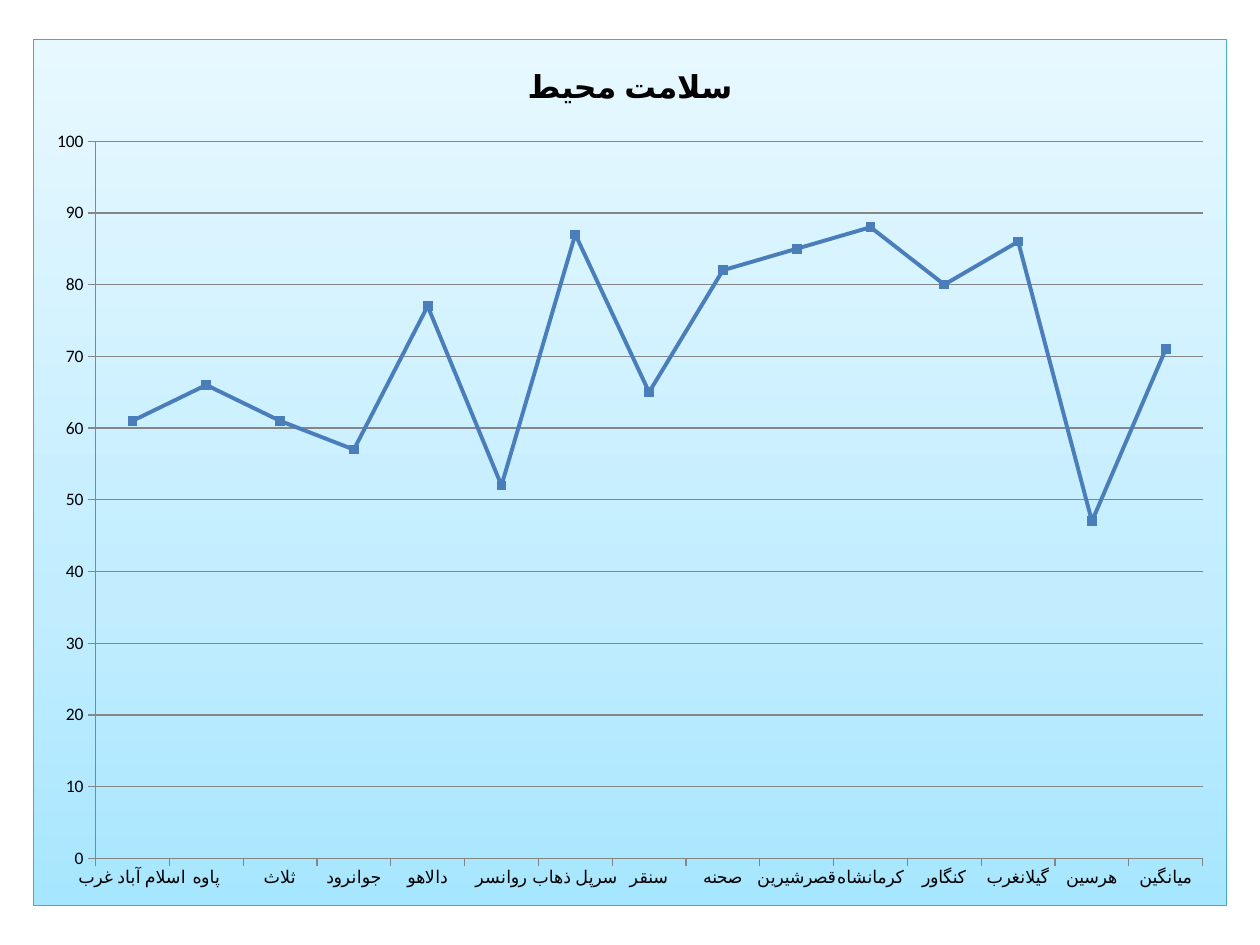
"""Build a slide with a line chart of environmental health by county."""
from pptx import Presentation
from pptx.chart.data import CategoryChartData
from pptx.dml.color import RGBColor
from pptx.enum.chart import XL_CHART_TYPE, XL_MARKER_STYLE, XL_TICK_MARK
from pptx.oxml import parse_xml
from pptx.oxml.ns import nsdecls
from pptx.util import Inches, Pt


def paint(color, code):
    color.rgb = RGBColor.from_string(code)


title = "سلامت محیط"
rates = {
    "اسلام آباد غرب": 61,
    "پاوه": 66,
    "ثلاث": 61,
    "جوانرود": 57,
    "دالاهو": 77,
    "روانسر": 52,
    "سرپل ذهاب": 87,
    "سنقر": 65,
    "صحنه": 82,
    "قصرشیرین": 85,
    "کرمانشاه": 88,
    "کنگاور": 80,
    "گیلانغرب": 86,
    "هرسین": 47,
    "میانگین": 71,
}

deck = Presentation()
deck.slide_width, deck.slide_height = Inches(10), Inches(7.5)
slide = deck.slides.add_slide(deck.slide_layouts[6])

data = CategoryChartData()
data.categories = list(rates)
data.add_series(title, list(rates.values()))
chart = slide.shapes.add_chart(
    XL_CHART_TYPE.LINE_MARKERS,
    Inches(0.26), Inches(0.31), Inches(9.48), Inches(6.88), data,
).chart
chart.has_legend = False
chart.font.name = "Calibri"
chart.font.size = Pt(10)
paint(chart.font.color, "000000")

chart.has_title = True
run = chart.chart_title.text_frame.paragraphs[0].add_run()
run.text = title
run.font.size = Pt(18)
run.font.bold = True
paint(run.font.color, "000000")
chart.chart_title.include_in_layout = False

names, rows = chart.category_axis, chart.value_axis
rows.minimum_scale, rows.maximum_scale, rows.major_unit = 0, 100, 10
rows.has_major_gridlines = True
rows.tick_labels.number_format = "0"
rows.tick_labels.number_format_is_linked = False
for axis in (names, rows):
    axis.major_tick_mark = XL_TICK_MARK.OUTSIDE
    axis.minor_tick_mark = XL_TICK_MARK.NONE
for part in (names, rows, rows.major_gridlines):
    paint(part.format.line.color, "868686")
    part.format.line.width = Pt(0.75)

plot = chart.plots[0]
plot.vary_by_categories = False
series = plot.series[0]
series.smooth = False
paint(series.format.line.color, "4A7EBB")
series.format.line.width = Pt(2.25)
mark = series.marker
mark.style = XL_MARKER_STYLE.SQUARE
mark.size = 5
mark.format.fill.solid()
paint(mark.format.fill.fore_color, "4F81BD")
paint(mark.format.line.color, "4A7EBB")

stops = "".join(
    f'<a:gs pos="{spot * 1000}"><a:srgbClr val="{code}"/></a:gs>'
    for spot, code in ((0, "A7E6FF"), (35, "C1EDFF"), (100, "E7F8FF")))
chart._chartSpace.chart.addnext(parse_xml(
    f'<c:spPr {nsdecls("c", "a")}><a:gradFill><a:gsLst>{stops}</a:gsLst>'
    f'<a:lin ang="{270 * 60000}" scaled="1"/></a:gradFill>'
    f'<a:ln w="{Pt(0.75)}"><a:solidFill><a:srgbClr val="46AAC5"/>'
    '</a:solidFill></a:ln></c:spPr>'))

deck.save("out.pptx")
